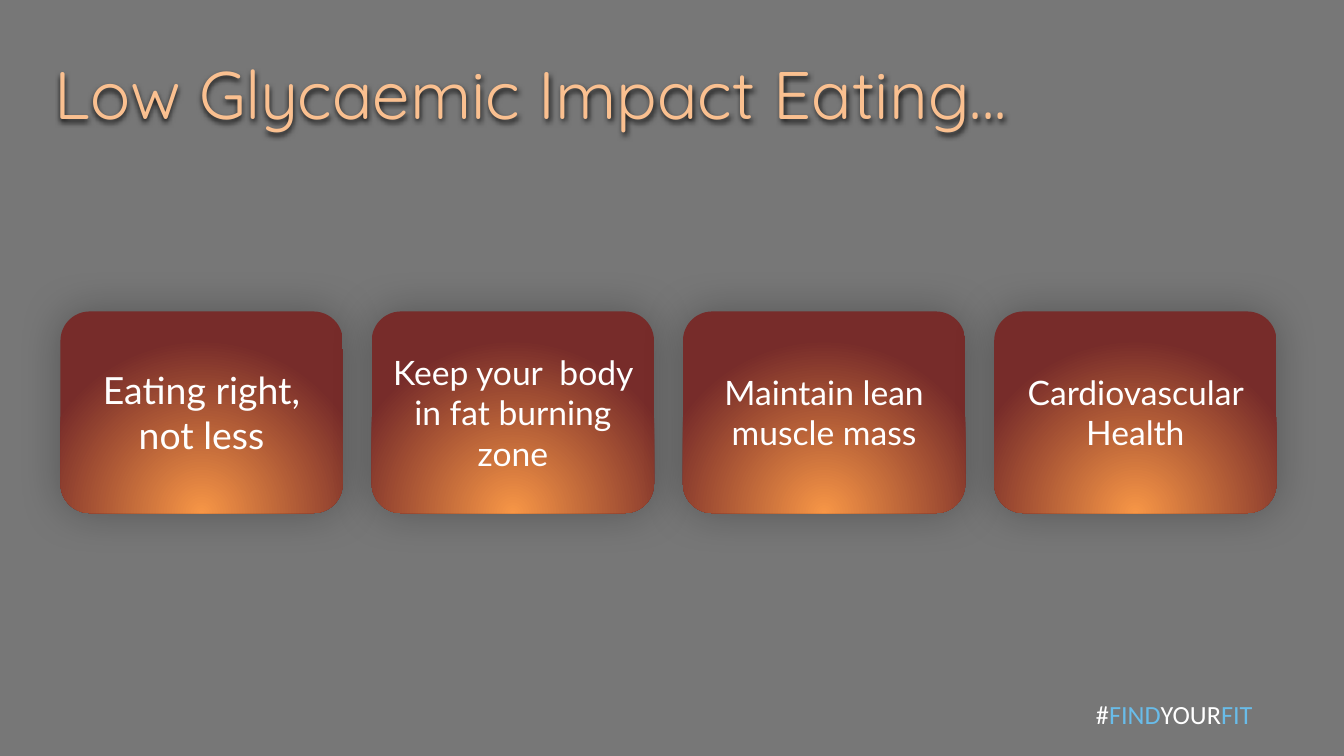
from pptx import Presentation
from pptx.dml.color import RGBColor
from pptx.enum.shapes import MSO_SHAPE
from pptx.enum.text import MSO_ANCHOR, MSO_AUTO_SIZE, PP_ALIGN
from pptx.oxml import parse_xml
from pptx.oxml.ns import nsdecls, qn
from pptx.util import Inches, Pt

THEME = {
    "veil": "0D0D0D", "title": "FAC090", "glow": "F79646", "edge": "772C2A",
    "light": "FFFFFF", "accent": "69BCE9", "shadow": "000000",
    "title_pt": 48, "lead_pt": 26.7, "card_pt": 24, "tag_pt": 18.7,
    "title_font": "Quicksand", "card_font": "Lato", "tag_font": "Calibri",
}


def style(r, font, size, color):
    r.font.name = THEME[font]
    r.font.size = Pt(THEME[size])
    r.font.color.rgb = RGBColor.from_string(THEME[color])


def add_shadow(sp, blur, dist, alpha):
    sp._element.spPr.append(parse_xml(
        f'<a:effectLst {nsdecls("a")}><a:outerShdw blurRad="{Pt(blur)}" dist="{Pt(dist)}" '
        f'dir="5400000" algn="ctr" rotWithShape="0"><a:srgbClr val="{THEME["shadow"]}">'
        f'<a:alpha val="{alpha * 1000}"/></a:srgbClr></a:outerShdw></a:effectLst>'))


prs = Presentation()
prs.slide_width, prs.slide_height = Inches(13.33), Inches(7.5)
s = prs.slides.add_slide(prs.slide_layouts[5])

# Translucent dark veil, behind the title
veil = s.shapes.add_shape(MSO_SHAPE.RECTANGLE, 0, Inches(-0.03), prs.slide_width, Inches(7.53))
veil.shadow.inherit = False
veil.line.fill.background()
veil.fill.solid()
veil.fill.fore_color.rgb = RGBColor.from_string(THEME["veil"])
veil_color = veil._element.spPr.find(qn("a:solidFill"))[0]
veil_color.append(parse_xml(f'<a:alpha {nsdecls("a")} val="56000"/>'))
s.shapes._spTree.insert(2, veil._element)

# Title
title = s.shapes.title
title.left, title.top, title.width, title.height = map(Inches, (0.44, 0.39, 11.24, 1.25))
title.fill.background()
add_shadow(title, 4, 1, 85)
tf = title.text_frame
tf.text = "Low Glycaemic Impact Eating..."
tf.auto_size = MSO_AUTO_SIZE.NONE
tf.vertical_anchor = MSO_ANCHOR.TOP
p = tf.paragraphs[0]
p.alignment = PP_ALIGN.LEFT
p.line_spacing = 1.1
style(p.runs[0], "title_font", "title_pt", "title")

# Row of benefit cards
LEFT, TOP, PITCH, WIDTH, HEIGHT = 0.6, 3.09, 3.087, 2.8, 2
cards = [
    ("Eating right, not less", "lead_pt"),
    ("Keep your  body in fat burning zone", "card_pt"),
    ("Maintain lean muscle mass", "card_pt"),
    ("Cardiovascular Health", "card_pt"),
]
for col, (text, size) in enumerate(cards):
    sp = s.shapes.add_shape(MSO_SHAPE.ROUNDED_RECTANGLE, Inches(LEFT + col * PITCH),
                            Inches(TOP), Inches(WIDTH), Inches(HEIGHT))
    sp.adjustments[0] = 0.145
    sp.line.fill.background()
    sp.fill.gradient()
    for stop, color in zip(sp.fill.gradient_stops, ("glow", "edge")):
        stop.color.rgb = RGBColor.from_string(THEME[color])
    # Radial glow centred below the middle of the card
    grad = sp._element.spPr.find(qn("a:gradFill"))
    grad.replace(grad.find(qn("a:lin")), parse_xml(
        f'<a:path {nsdecls("a")} path="circle">'
        '<a:fillToRect l="50000" t="130000" r="50000" b="-30000"/></a:path>'))
    add_shadow(sp, 31, 0, 27)
    tf = sp.text_frame
    tf.text = text
    tf.word_wrap = True
    tf.vertical_anchor = MSO_ANCHOR.MIDDLE
    p = tf.paragraphs[0]
    p.alignment = PP_ALIGN.CENTER
    style(p.runs[0], "card_font", size, "light")

# Hashtag
tag = s.shapes.add_textbox(*map(Inches, (10.74, 6.86, 2.17, 0.45)))
tf = tag.text_frame
tf.word_wrap = False
tf.auto_size = MSO_AUTO_SIZE.SHAPE_TO_FIT_TEXT
tf.margin_left = tf.margin_right = Inches(0.13)
tf.margin_top = tf.margin_bottom = Inches(0.07)
for text, color in (("#", "light"), ("FIND", "accent"), ("YOUR", "light"), ("FIT", "accent")):
    r = tf.paragraphs[0].add_run()
    r.text = text
    style(r, "tag_font", "tag_pt", color)

prs.save("out.pptx")
